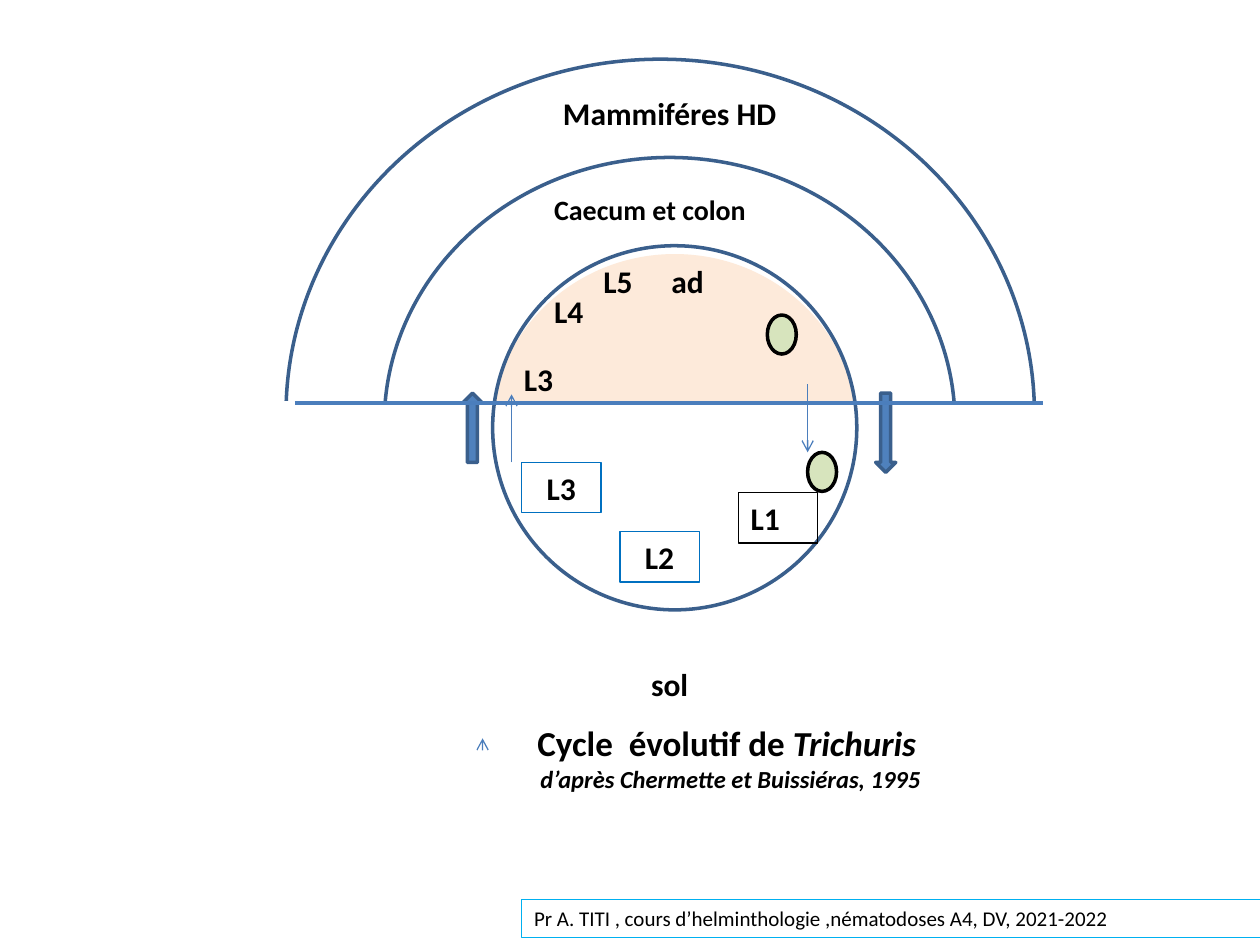
import pptx
import pptx.dml.color
import pptx.enum.shapes
import pptx.enum.text
import pptx.oxml.ns
import pptx.util
from lxml import etree
from pptx.util import Inches

SHAPE = pptx.enum.shapes.MSO_SHAPE
CENTER = pptx.enum.text.PP_ALIGN.CENTER
OUTLINE, BLUE, ARROW = "3A5F8C", "4F81BD", "4B7EBC"
PEACH, GREEN, WHITE, BLACK = "FDEADA", "D7E4BD", "FFFFFF", "000000"
LABEL_SIZE = (0.63, 0.4)


def color(value):
    """Turn a hex string into a colour."""
    return pptx.dml.color.RGBColor.from_string(value)


def add_figure(page, kind, bounds, line, fill=None, width=2):
    """Add an outlined preset shape, filled when a colour is given."""
    figure = page.shapes.add_shape(kind, *map(Inches, bounds))
    figure.shadow.inherit = False
    if fill:
        figure.fill.solid()
        figure.fill.fore_color.rgb = color(fill)
    else:
        figure.fill.background()
    figure.line.color.rgb = color(line)
    figure.line.width = pptx.util.Pt(width)
    return figure


def add_line(page, start, end, width=0.75, arrow=True):
    """Add a straight line, with an open arrowhead at its end if wanted."""
    line = page.shapes.add_connector(
        pptx.enum.shapes.MSO_CONNECTOR.STRAIGHT, *map(Inches, start + end))
    line.line.color.rgb = color(ARROW)
    line.line.width = pptx.util.Pt(width)
    properties = line._element.spPr
    if arrow:
        head = etree.SubElement(properties.find(pptx.oxml.ns.qn("a:ln")),
                                pptx.oxml.ns.qn("a:tailEnd"))
        head.set("type", "arrow")
    etree.SubElement(properties, pptx.oxml.ns.qn("a:effectLst"))


def style(para, size, bold=True, align=None):
    """Set the font and alignment of a paragraph."""
    para.font.name = "Calibri"
    para.font.size = pptx.util.Pt(size)
    para.font.bold = bold
    para.font.color.rgb = color(BLACK)
    para.alignment = align or pptx.enum.text.PP_ALIGN.LEFT


def write(box, text, size=18, bold=True, align=None, wrap=True):
    """Write one paragraph at the top of a box."""
    frame = box.text_frame
    frame.word_wrap = wrap
    frame.vertical_anchor = pptx.enum.text.MSO_ANCHOR.TOP
    frame.text = text
    style(frame.paragraphs[0], size, bold, align)


def add_label(page, text, bounds, **options):
    """Add a plain text label."""
    write(page.shapes.add_textbox(*map(Inches, bounds)), text, **options)


def add_framed_label(page, text, bounds, line, **options):
    """Add text in a thin rectangular frame."""
    write(add_figure(page, SHAPE.RECTANGLE, bounds, line, width=0.75), text, **options)


def add_caption(page):
    """Add the two-line title of the cycle."""
    box = page.shapes.add_textbox(*map(Inches, (3.4, 5.68, 4.8, 0.67)))
    box.text_frame.word_wrap = True
    title = box.text_frame.paragraphs[0]
    style(title, 20, align=CENTER)
    title.add_run().text = "Cycle  évolutif de "
    species = title.add_run()
    species.text = "Trichuris "
    species.font.italic = True
    credit = box.text_frame.add_paragraph()
    credit.text = "d’après Chermette et Buissiéras, 1995"
    style(credit, 14, align=CENTER)
    credit.font.italic = True


def main():
    """Build the life cycle slide."""
    deck = pptx.Presentation()
    deck.slide_width, deck.slide_height = Inches(10), Inches(7.5)
    page = deck.slides.add_slide(deck.slide_layouts[6])

    add_figure(page, SHAPE.OVAL, (3.91, 2.03, 2.89, 2.81), PEACH, PEACH)
    for host_arc in ((3.05, 1.25, 4.53, 4.22), (2.27, 0.47, 5.94, 5.63)):
        add_figure(page, SHAPE.OVAL, host_arc, OUTLINE)
    add_figure(page, SHAPE.RECTANGLE, (2.19, 3.2, 6.95, 3.05), WHITE, WHITE)
    add_figure(page, SHAPE.OVAL, (3.91, 1.95, 2.89, 2.89), OUTLINE)

    add_figure(page, SHAPE.DOWN_ARROW, (6.95, 3.12, 0.16, 0.63), OUTLINE, BLUE)
    for start, end in (((3.83, 5.94), (3.83, 5.86)),
                       ((6.41, 3.05), (6.41, 3.59)),
                       ((4.06, 3.67), (4.06, 3.13))):
        add_line(page, start, end)

    for text, left, top, line, align in (("L1", 5.86, 3.91, BLACK, None),
                                         ("L2", 4.92, 4.22, "0070C0", CENTER),
                                         ("L3", 4.14, 3.67, "0070C0", CENTER)):
        add_framed_label(page, text, (left, top, *LABEL_SIZE), line, align=align)
    for text, left, top, align in (("L3", 4.06, 2.81, None), ("L4", 4.3, 2.27, None),
                                   ("L5", 4.69, 2.03, None), ("ad", 5.23, 2.03, None),
                                   ("sol", 5, 5.23, CENTER)):
        add_label(page, text, (left, top, *LABEL_SIZE), align=align)
    add_label(page, "Mammiféres HD", (4.37, 0.7, 2.17, 0.4), wrap=False)

    add_figure(page, SHAPE.UP_ARROW, (3.67, 3.12, 0.16, 0.55), OUTLINE, BLUE)
    add_caption(page)
    add_line(page, (2.34, 3.2), (8.28, 3.2), width=2.25, arrow=False)
    for left, top in ((6.09, 2.5), (6.41, 3.59)):
        add_figure(page, SHAPE.OVAL, (left, top, 0.23, 0.31), BLACK, GREEN)
    add_label(page, "Caecum et colon", (4.3, 1.48, 2.02, 0.37), size=16, wrap=False)
    add_framed_label(
        page, "Pr A. TITI , cours d’helminthologie ,nématodoses A4, DV, 2021-2022",
        (4.14, 7.14, 5.9, 0.3), "00B0F0", size=12, bold=False)
    deck.save("out.pptx")


if __name__ == "__main__":
    main()
